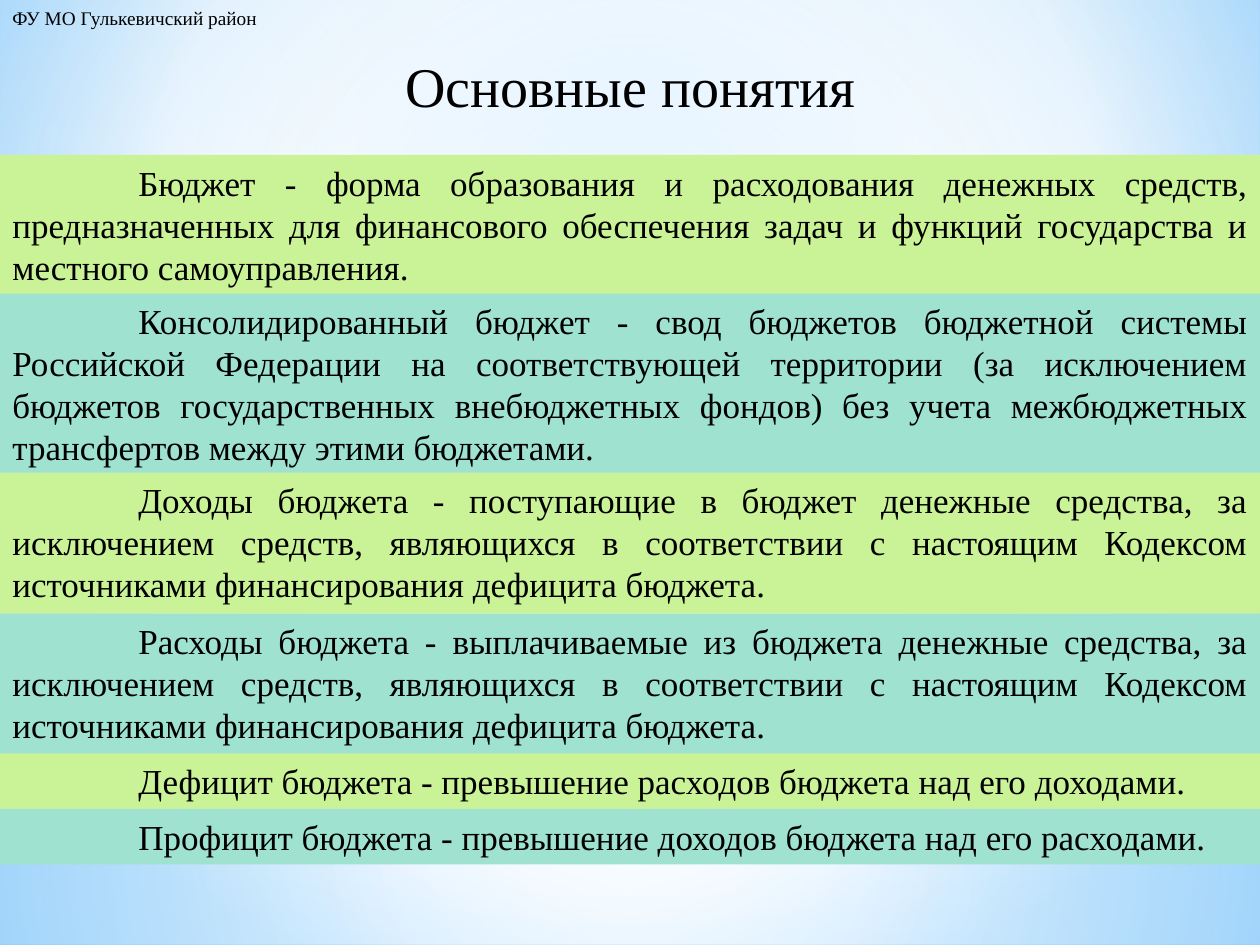
import pptx
import pptx.util
import pptx.dml.color
import pptx.enum.shapes
import pptx.enum.text
import pptx.oxml
import pptx.oxml.ns

Inch, Pt = pptx.util.Inches, pptx.util.Pt
Align = pptx.enum.text.PP_ALIGN
Kind = pptx.enum.shapes.MSO_SHAPE
FONT = "Times New Roman"
HUES = {"green": "CAF297", "mint": "9EE2CF", "text": "000000", "white": "FFFFFF",
        "sky": "B4DCFA", "glow": "9ED5FF", "edge": "5BB9FF"}


def blend(fill, root, stops, focus=None):
    """Fill with (place, hue, opacity) stops, round a focus or else downwards."""
    fill.gradient()
    old = root.find(".//" + pptx.oxml.ns.qn("a:gradFill"))
    marks = "".join(
        f'<a:gs pos="{place * 1000}"><a:srgbClr val="{HUES[hue]}">'
        f'<a:alpha val="{alpha * 1000}"/></a:srgbClr></a:gs>'
        for place, hue, alpha in stops)
    if focus:
        sides = " ".join(f'{side}="{share * 1000}"' for side, share in zip("ltrb", focus))
        way = f'<a:path path="circle"><a:fillToRect {sides}/></a:path>'
    else:
        way = '<a:lin ang="5400000" scaled="0"/>'
    new = pptx.oxml.parse_xml(
        f'<a:gradFill {pptx.oxml.ns.nsdecls("a")} rotWithShape="1">'
        f'<a:gsLst>{marks}</a:gsLst>{way}</a:gradFill>')
    old.getparent().replace(old, new)


def write(frame, text, size, align):
    frame.text = text
    frame.margin_left = frame.margin_right = Inch(0.1)
    frame.margin_top = frame.margin_bottom = Inch(0.05)
    par = frame.paragraphs[0]
    par.alignment = align
    font = par.runs[0].font
    font.name, font.size = FONT, Pt(size)
    font.color.rgb = pptx.dml.color.RGBColor.from_string(HUES["text"])
    return par


deck = pptx.Presentation()
deck.slide_width, deck.slide_height = Inch(10), Inch(7.5)
wide = deck.slide_width
slide = deck.slides.add_slide(deck.slide_layouts[5])
shapes = slide.shapes

# Backdrop: a round glow under four translucent layers
blend(slide.background.fill, slide._element,
      [(0, "glow", 100), (60, "white", 100), (100, "edge", 100)], (20, 10, 20, 60))
middle = (50, 50, 50, 50)
layers = [
    (Kind.RECTANGLE, 5.58, 1.92, middle,
     [(0, "white", 91), (37, "white", 76), (100, "sky", 79)]),
    (Kind.RECTANGLE, 0, 5.58, middle,
     [(0, "white", 89), (48, "white", 62), (100, "sky", 79)]),
    (Kind.RECTANGLE, 4.12, 2.5, None,
     [(0, "white", 0), (29, "white", 30), (45, "sky", 40),
      (55, "white", 26), (65, "sky", 60), (100, "white", 0)]),
    (Kind.OVAL, 1.75, 5.58, middle, [(0, "white", 100), (56, "white", 0)]),
]
for kind, top, high, focus, stops in layers:
    layer = shapes.add_shape(kind, 0, Inch(top), wide, Inch(high))
    layer.shadow.inherit = False
    layer.line.fill.background()
    blend(layer.fill, layer._element, stops, focus)

# Title, raised above the backdrop
title = shapes.title
title.left, title.top, title.width, title.height = map(Inch, (0.91, 0.36, 8.19, 0.64))
write(title.text_frame, "Основные понятия", 32, Align.CENTER)
title.text_frame.vertical_anchor = pptx.enum.text.MSO_ANCHOR.TOP
shapes._spTree.append(title._element)

# Bands of terms: top, number of lines, text
terms = [
    (1.23, 3, "Бюджет - форма образования и расходования денежных средств, "
     "предназначенных для финансового обеспечения задач и функций государства "
     "и местного самоуправления."),
    (2.33, 4, "Консолидированный бюджет - свод бюджетов бюджетной системы "
     "Российской Федерации на соответствующей территории (за исключением бюджетов "
     "государственных внебюджетных фондов) без учета межбюджетных трансфертов "
     "между этими бюджетами."),
    (3.75, 3, "Доходы бюджета - поступающие в бюджет денежные средства, за "
     "исключением средств, являющихся в соответствии с настоящим Кодексом "
     "источниками финансирования дефицита бюджета."),
    (4.87, 3, "Расходы бюджета - выплачиваемые из бюджета денежные средства, за "
     "исключением средств, являющихся в соответствии с настоящим Кодексом "
     "источниками финансирования дефицита бюджета."),
    (5.98, 1, "Дефицит бюджета - превышение расходов бюджета над его доходами."),
    (6.42, 1, "Профицит бюджета - превышение доходов бюджета над его расходами."),
]
for row, (top, lines, text) in enumerate(terms):
    band = shapes.add_shape(Kind.RECTANGLE, 0, Inch(top), wide, Inch(0.1 + 0.34 * lines))
    band.shadow.inherit = False
    band.line.fill.background()
    band.fill.solid()
    hue = HUES["mint" if row % 2 else "green"]
    band.fill.fore_color.rgb = pptx.dml.color.RGBColor.from_string(hue)
    par = write(band.text_frame, text, 20, Align.JUSTIFY)
    par._p.get_or_add_pPr().set("indent", str(Inch(1)))
    band.text_frame.vertical_anchor = pptx.enum.text.MSO_ANCHOR.TOP

# Office name in the corner
label = shapes.add_textbox(0, 0, Inch(2.25), Inch(0.29))
write(label.text_frame, "ФУ МО Гулькевичский район", 11, Align.LEFT)
label.text_frame.word_wrap = False

deck.save("out.pptx")
